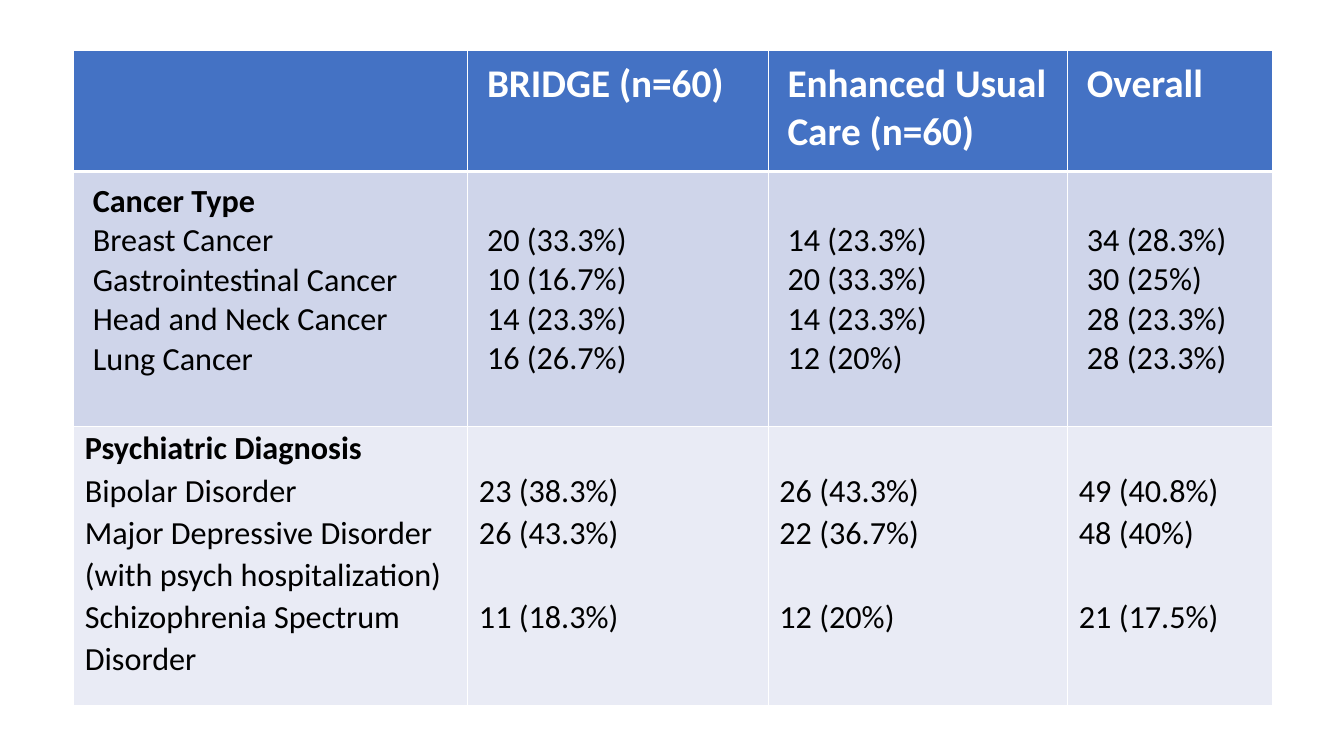
"""Build a slide with a table of cancer types and psychiatric diagnoses by study arm."""
from dataclasses import dataclass

from lxml import etree
from pptx import Presentation
from pptx import util as u
from pptx.dml import color
from pptx.enum import text
from pptx.oxml import ns


@dataclass(frozen=True)
class Theme:
    font: str = "Calibri"
    head_size: int = 28
    body_size: int = 23
    head: str = "4472C4"
    band: str = "CFD5EA"
    pale: str = "E9EBF5"
    white: str = "FFFFFF"
    black: str = "000000"


def write(frame, words, size, ink, font, bold=False, lead=1.0, gap=0, first=False):
    para = frame.paragraphs[0] if first else frame.add_paragraph()
    para.alignment = text.PP_ALIGN.LEFT
    para.line_spacing = lead
    if gap:
        para.space_before = u.Pt(gap)
    run = para.add_run()
    run.text = words
    run.font.name, run.font.size, run.font.bold = font, u.Pt(size), bold
    run.font.color.rgb = color.RGBColor.from_string(ink)


class Board:
    def __init__(self, deck, theme):
        self.wide, self.high = deck.slide_width, deck.slide_height
        self.theme = theme
        self.slide = deck.slides.add_slide(deck.slide_layouts[6])

    def across(self, share):
        return u.Emu(round(self.wide * share / 100))

    def down(self, share):
        return u.Emu(round(self.high * share / 100))

    def table(self, left, top, cols, rows):
        frame = self.slide.shapes.add_table(
            len(rows), len(cols), self.across(left), self.down(top),
            self.across(sum(cols)), self.down(sum(rows)))
        grid = frame.table
        for col, share in zip(grid.columns, cols):
            col.width = self.across(share)
        for row, share in zip(grid.rows, rows):
            row.height = self.down(share)
        return grid

    def edge(self, cell, sides):
        props = cell._tc.get_or_add_tcPr()
        for side, width in sides.items():
            line = etree.SubElement(props, ns.qn(f"a:ln{side}"), w=str(u.Pt(width)))
            fill = etree.SubElement(line, ns.qn("a:solidFill"))
            etree.SubElement(fill, ns.qn("a:srgbClr"), val=self.theme.white)

    def cell(self, cell, lines, fill, pad, sides, **style):
        self.edge(cell, sides)
        cell.fill.solid()
        cell.fill.fore_color.rgb = color.RGBColor.from_string(fill)
        side, top, base = pad
        cell.margin_left = cell.margin_right = self.across(side)
        cell.margin_top, cell.margin_bottom = self.down(top), self.down(base)
        cell.vertical_anchor = text.MSO_ANCHOR.TOP
        for spot, (words, extra) in enumerate(lines):
            write(cell.text_frame, words, font=self.theme.font, first=spot == 0,
                  **{**style, **extra})


HEADS = ["", "BRIDGE (n=60)", "Enhanced Usual Care (n=60)", "Overall"]
CANCER = [
    ["Cancer Type", "Breast Cancer", "Gastrointestinal Cancer",
     "Head and Neck Cancer", "Lung Cancer"],
    ["20 (33.3%)", "10 (16.7%)", "14 (23.3%)", "16 (26.7%)"],
    ["14 (23.3%)", "20 (33.3%)", "14 (23.3%)", "12 (20%)"],
    ["34 (28.3%)", "30 (25%)", "28 (23.3%)", "28 (23.3%)"],
]
PSYCH = [
    ["Psychiatric Diagnosis", "Bipolar Disorder",
     "Major Depressive Disorder (with psych hospitalization)",
     "Schizophrenia Spectrum Disorder"],
    ["23 (38.3%)", "26 (43.3%)", "11 (18.3%)"],
    ["26 (43.3%)", "22 (36.7%)", "12 (20%)"],
    ["49 (40.8%)", "48 (40%)", "21 (17.5%)"],
]


def main():
    deck = Presentation()
    deck.slide_width, deck.slide_height = u.Inches(13.33), u.Inches(7.5)
    theme = Theme()
    board = Board(deck, theme)
    grid = board.table(5.48, 6.67, [29.33, 22.36, 22.28, 15.23], [16, 33.73, 36.93])

    thin = dict(L=1, R=1, T=1, B=1)
    for col, words in enumerate(HEADS):
        lines = [(words, {})] if words else []
        board.cell(grid.cell(0, col), lines, theme.head, (1.43, 1.33, 1.33),
                   {**thin, "B": 3}, size=theme.head_size, ink=theme.white, bold=True)

    groups = [
        (CANCER, theme.band, 1.43, 1.33, 5.2, 1.0, 0, {**thin, "T": 3}),
        (PSYCH, theme.pale, 0.83, 0, 5.6, 1.07, 30, thin),
    ]
    for row, (group, fill, side, base, drop, lead, gap, sides) in enumerate(groups, 1):
        for col, words in enumerate(group):
            label = col == 0
            lines = [(word, {}) for word in words]
            if label:
                lines[0][1]["bold"] = True
            else:
                lines[-1][1]["gap"] = gap
            top = base if label else base + drop
            board.cell(grid.cell(row, col), lines, fill, (side, top, base), sides,
                       size=theme.body_size, ink=theme.black, lead=lead)
    deck.save("out.pptx")


if __name__ == "__main__":
    main()
